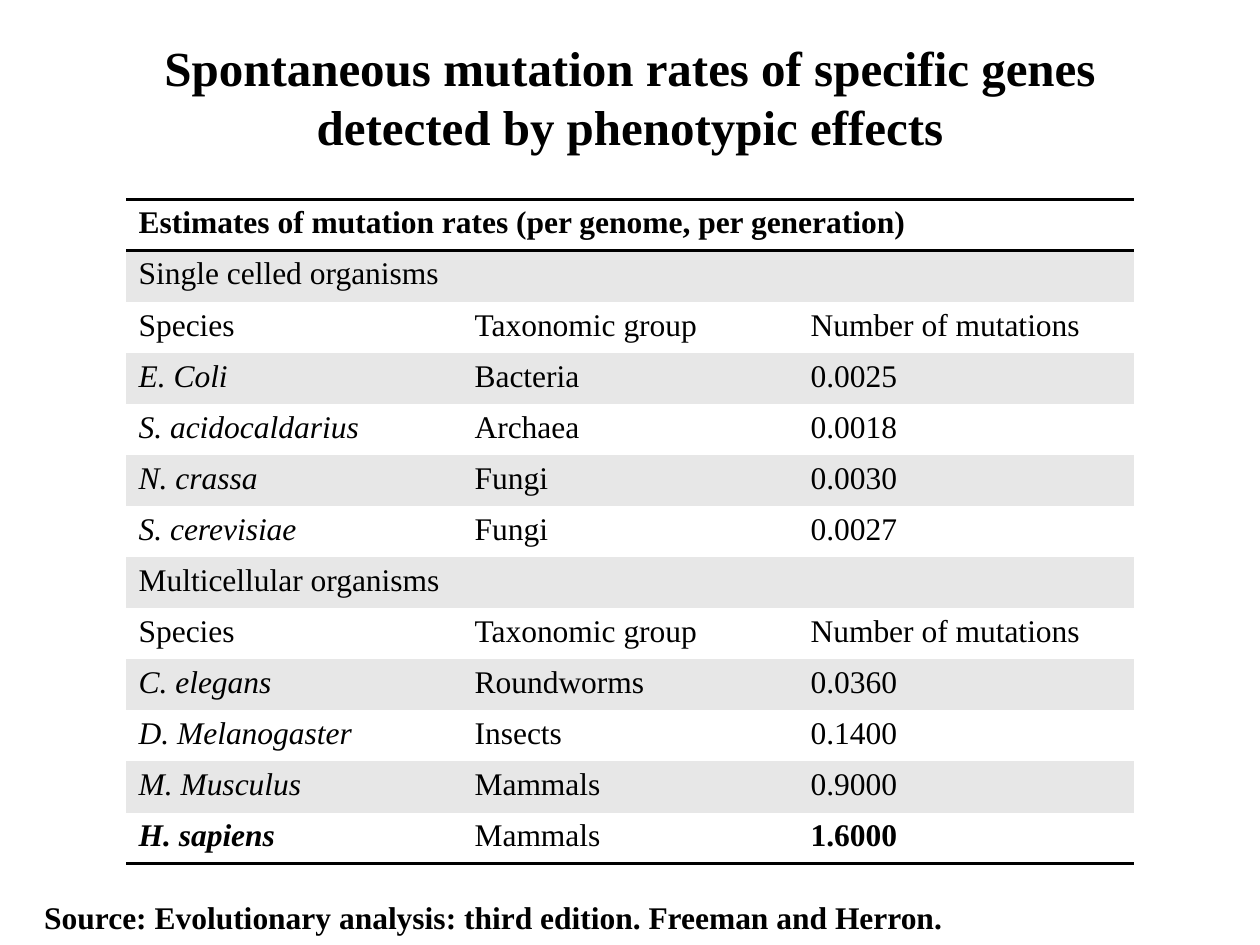
import pptx
import pptx.dml.color
import pptx.enum.text
import pptx.oxml
import pptx.oxml.ns
import pptx.util
from dataclasses import dataclass
from pptx.util import Cm


@dataclass(frozen=True)
class Theme:
    font: str = "Times New Roman"
    ink: str = "000000"
    plain: str = "FFFFFF"
    band: str = "E7E7E7"
    title_size: int = 28
    body_size: int = 18
    rule_width: int = 2


THEME = Theme()
NO_GRID_STYLE = "{2D5ABB26-0587-4C30-8999-92F81FD0307C}"

TITLE = ["Spontaneous mutation rates of specific genes",
         "detected by phenotypic effects"]
SOURCE = ["Source: Evolutionary analysis: third edition. Freeman and Herron."]
COLUMN_HEADS = ("Species", "Taxonomic group", "Number of mutations")
# A row with a single entry spans the whole table
RATES = [
    ("Estimates of mutation rates (per genome, per generation)",),
    ("Single celled organisms",),
    COLUMN_HEADS,
    ("E. Coli", "Bacteria", "0.0025"),
    ("S. acidocaldarius", "Archaea", "0.0018"),
    ("N. crassa", "Fungi", "0.0030"),
    ("S. cerevisiae", "Fungi", "0.0027"),
    ("Multicellular organisms",),
    COLUMN_HEADS,
    ("C. elegans", "Roundworms", "0.0360"),
    ("D. Melanogaster", "Insects", "0.1400"),
    ("M. Musculus", "Mammals", "0.9000"),
    ("H. sapiens", "Mammals", "1.6000"),
]


def write(paragraph, wording, size, bold=False, italic=False):
    run = paragraph.add_run()
    run.text = wording
    formats = {"name": THEME.font, "size": pptx.util.Pt(size),
               "bold": bold, "italic": italic}
    for attribute, value in formats.items():
        setattr(run.font, attribute, value)
    run.font.color.rgb = pptx.dml.color.RGBColor.from_string(THEME.ink)


def add_bold_text(slide, box, lines, size, align, wrap):
    frame = slide.shapes.add_textbox(*box).text_frame
    formats = {"word_wrap": wrap,
               "auto_size": pptx.enum.text.MSO_AUTO_SIZE.SHAPE_TO_FIT_TEXT}
    for attribute, value in formats.items():
        setattr(frame, attribute, value)
    for index, line in enumerate(lines):
        paragraph = frame.add_paragraph() if index else frame.paragraphs[0]
        paragraph.alignment = align
        write(paragraph, line, size, bold=True)


def add_title(slide, box):
    add_bold_text(slide, box, TITLE, THEME.title_size,
                  pptx.enum.text.PP_ALIGN.CENTER, wrap=True)


def add_source(slide, box):
    add_bold_text(slide, box, SOURCE, THEME.body_size,
                  pptx.enum.text.PP_ALIGN.LEFT, wrap=False)


def rule_cell(cell, sides):
    """Draw rules on the given sides, listed in schema order (T before B)."""
    for side in sides:
        cell._tc.get_or_add_tcPr().append(pptx.oxml.parse_xml(
            f'<a:ln{side} {pptx.oxml.ns.nsdecls("a")} '
            f'w="{pptx.util.Pt(THEME.rule_width)}"><a:solidFill>'
            f'<a:srgbClr val="{THEME.ink}"/></a:solidFill></a:ln{side}>'))


def add_rates_table(slide, box):
    left, top, width, height = box
    columns, last = len(COLUMN_HEADS), len(RATES) - 1
    frame = slide.shapes.add_table(len(RATES), columns, left, top, width, height)
    table = frame.table
    for attribute in ("first_row", "horz_banding"):
        setattr(table, attribute, False)
    style = table._tbl.tblPr.find(pptx.oxml.ns.qn("a:tableStyleId"))
    style.text = NO_GRID_STYLE

    rules = {0: "TB", last: "B"}
    for r, entries in enumerate(RATES):
        table.rows[r].height = height // len(RATES)
        # Banding and rules
        color = THEME.band if r % 2 else THEME.plain
        for c in range(columns):
            cell = table.cell(r, c)
            rule_cell(cell, rules.get(r, ""))
            cell.fill.solid()
            cell.fill.fore_color.rgb = pptx.dml.color.RGBColor.from_string(color)
        # Wording: species are italic, the human figures stand out in bold
        if len(entries) == 1:
            table.cell(r, 0).merge(table.cell(r, columns - 1))
        is_species = len(entries) == columns and entries != COLUMN_HEADS
        for c, entry in enumerate(entries):
            write(table.cell(r, c).text_frame.paragraphs[0], entry,
                  THEME.body_size,
                  bold=r == 0 or (r == last and c != 1),
                  italic=is_species and c == 0)


def main():
    deck = pptx.Presentation()
    deck.slide_width, deck.slide_height = Cm(25.4), Cm(19.05)
    slide = deck.slides.add_slide(deck.slide_layouts[6])
    add_title(slide, (Cm(0), Cm(0.64), deck.slide_width, Cm(2.62)))
    add_rates_table(slide, (Cm(2.54), Cm(4.02), Cm(20.32), Cm(13.39)))
    add_source(slide, (Cm(0.64), Cm(17.98), Cm(18.97), Cm(1.02)))
    deck.save("out.pptx")


if __name__ == "__main__":
    main()
